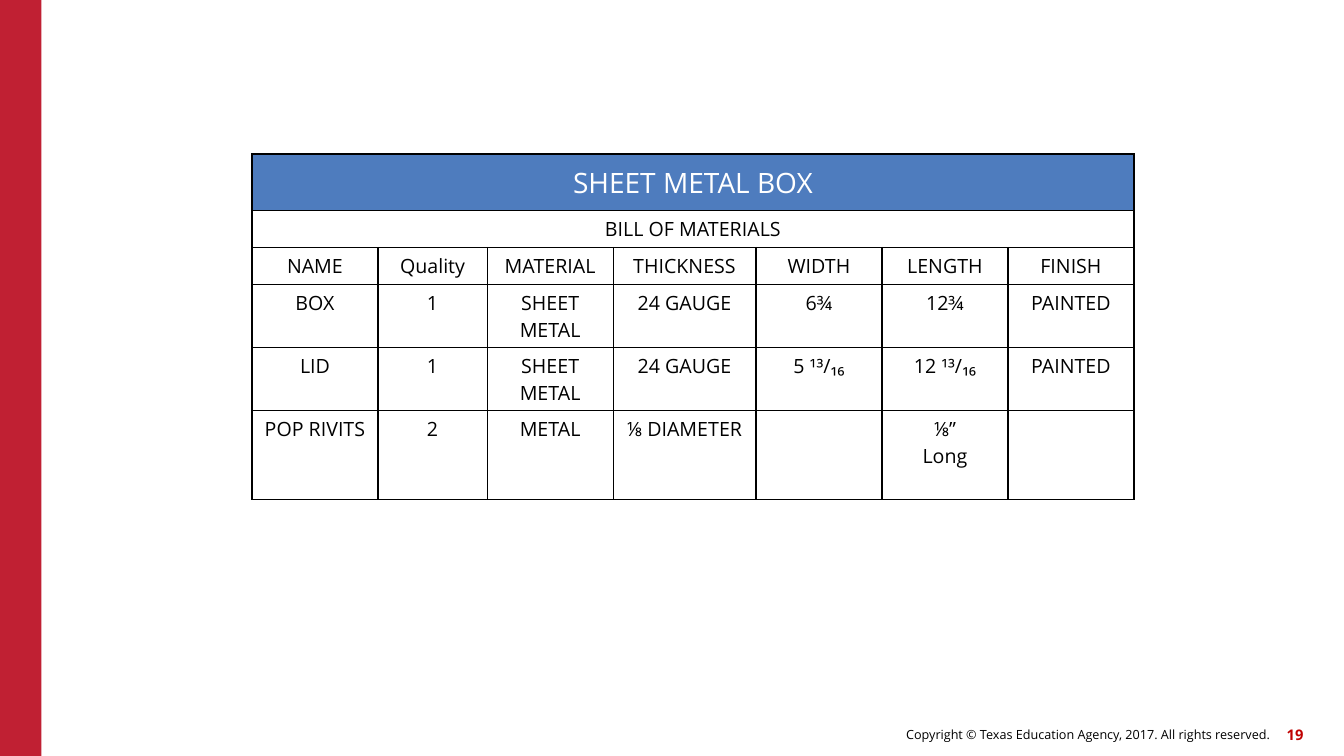
"""Build the sheet metal box bill of materials slide."""
from lxml import etree
from pptx import Presentation
from pptx.dml.color import RGBColor
from pptx.enum.shapes import MSO_SHAPE as Shape
from pptx.enum.text import MSO_ANCHOR as Anchor, PP_ALIGN as Align
from pptx.oxml import parse_xml
from pptx.oxml.ns import nsdecls
from pptx.util import Pt

BLACK = RGBColor(0, 0, 0)
WHITE = RGBColor(255, 255, 255)
CRIMSON = RGBColor(0xC0, 0x20, 0x33)
DARK_RED = RGBColor(0xC0, 0, 0)
BLUE = RGBColor(0x4E, 0x7C, 0xBE)
FONT = "Open Sans"

COLUMN_WIDTHS = [90, 78, 90, 102, 90, 90, 90]
ROW_HEIGHTS = [40.3, 26.4, 26.4, 45.2, 45.2, 63.6]
TITLE = "SHEET METAL BOX"
SUBTITLE = "BILL OF MATERIALS"
MATERIALS = [
    ["NAME", "Quality", "MATERIAL", "THICKNESS", "WIDTH", "LENGTH", "FINISH"],
    ["BOX", "1", "SHEET METAL", "24 GAUGE", "6¾", "12¾", "PAINTED"],
    ["LID", "1", "SHEET METAL", "24 GAUGE", "5 ¹³/₁₆", "12 ¹³/₁₆", "PAINTED"],
    ["POP RIVITS", "2", "METAL", "⅛ DIAMETER", "", "⅛”\nLong", ""],
]


def style_text(frame, size, color, align, bold=False):
    """Format every paragraph of a text frame alike."""
    for paragraph in frame.paragraphs:
        paragraph.alignment = align
        font = paragraph.font
        font.name, font.size, font.bold = FONT, Pt(size), bold
        font.color.rgb = color
        for run in paragraph.runs:
            run.font.name, run.font.size, run.font.bold = FONT, Pt(size), bold
            run.font.color.rgb = color


def add_side_band(slide):
    """Add the red band along the left edge."""
    band = slide.shapes.add_shape(Shape.RECTANGLE, 0, 0, Pt(29.5), Pt(540))
    band.shadow.inherit = False
    band.fill.solid()
    band.fill.fore_color.rgb = CRIMSON
    band.line.fill.background()


def add_footer(slide, text, left, top, width, size, color, bold=False):
    """Add a right-aligned footer text."""
    footer = slide.shapes.add_textbox(Pt(left), Pt(top), Pt(width), Pt(23))
    frame = footer.text_frame
    frame.word_wrap = True
    frame.vertical_anchor = Anchor.MIDDLE
    frame.margin_left = frame.margin_right = 0
    frame.margin_top = frame.margin_bottom = 0
    frame.text = text
    style_text(frame, size, color, Align.RIGHT, bold)


def add_borders(cell):
    """Draw a thin black line on all four sides of a cell."""
    properties = cell._tc.get_or_add_tcPr()
    for position, side in enumerate(("lnL", "lnR", "lnT", "lnB")):
        border = parse_xml(f'<a:{side} {nsdecls("a")} w="{Pt(1)}"/>')
        fill = etree.SubElement(border, "{%s}solidFill" % border.nsmap["a"])
        etree.SubElement(fill, "{%s}srgbClr" % border.nsmap["a"], val=str(BLACK))
        properties.insert(position, border)


def fill_cell(cell, text, size=14, color=BLACK, background=WHITE):
    """Write a centred text into a cell with a plain background."""
    cell.text = text
    cell.fill.solid()
    cell.fill.fore_color.rgb = background
    style_text(cell.text_frame, size, color, Align.CENTER)


def add_materials_table(slide):
    """Add the bill of materials with its two full-width headings."""
    table = slide.shapes.add_table(
        len(ROW_HEIGHTS), len(COLUMN_WIDTHS), Pt(180), Pt(110),
        Pt(sum(COLUMN_WIDTHS)), Pt(sum(ROW_HEIGHTS))).table
    table.first_row = table.horz_banding = False
    for column, width in zip(table.columns, COLUMN_WIDTHS):
        column.width = Pt(width)
    for row, height in zip(table.rows, ROW_HEIGHTS):
        row.height = Pt(height)
    for cell in table.iter_cells():
        add_borders(cell)
    for heading_row in range(2):
        table.cell(heading_row, 0).merge(
            table.cell(heading_row, len(COLUMN_WIDTHS) - 1))
    fill_cell(table.cell(0, 0), TITLE, 20, WHITE, BLUE)
    table.cell(0, 0).vertical_anchor = Anchor.MIDDLE
    fill_cell(table.cell(1, 0), SUBTITLE)
    for row_index, entries in enumerate(MATERIALS, start=2):
        for column_index, entry in enumerate(entries):
            fill_cell(table.cell(row_index, column_index), entry)


def main():
    """Build and save the slide."""
    deck = Presentation()
    deck.slide_width, deck.slide_height = Pt(960), Pt(540)
    slide = deck.slides.add_slide(deck.slide_layouts[6])
    add_side_band(slide)
    add_footer(slide, "Copyright © Texas Education Agency, 2017. All rights reserved.",
               442, 513, 465, 9, BLACK)
    add_footer(slide, "19", 901, 513.5, 30, 10.5, DARK_RED, bold=True)
    add_materials_table(slide)
    deck.save("out.pptx")


if __name__ == "__main__":
    main()
